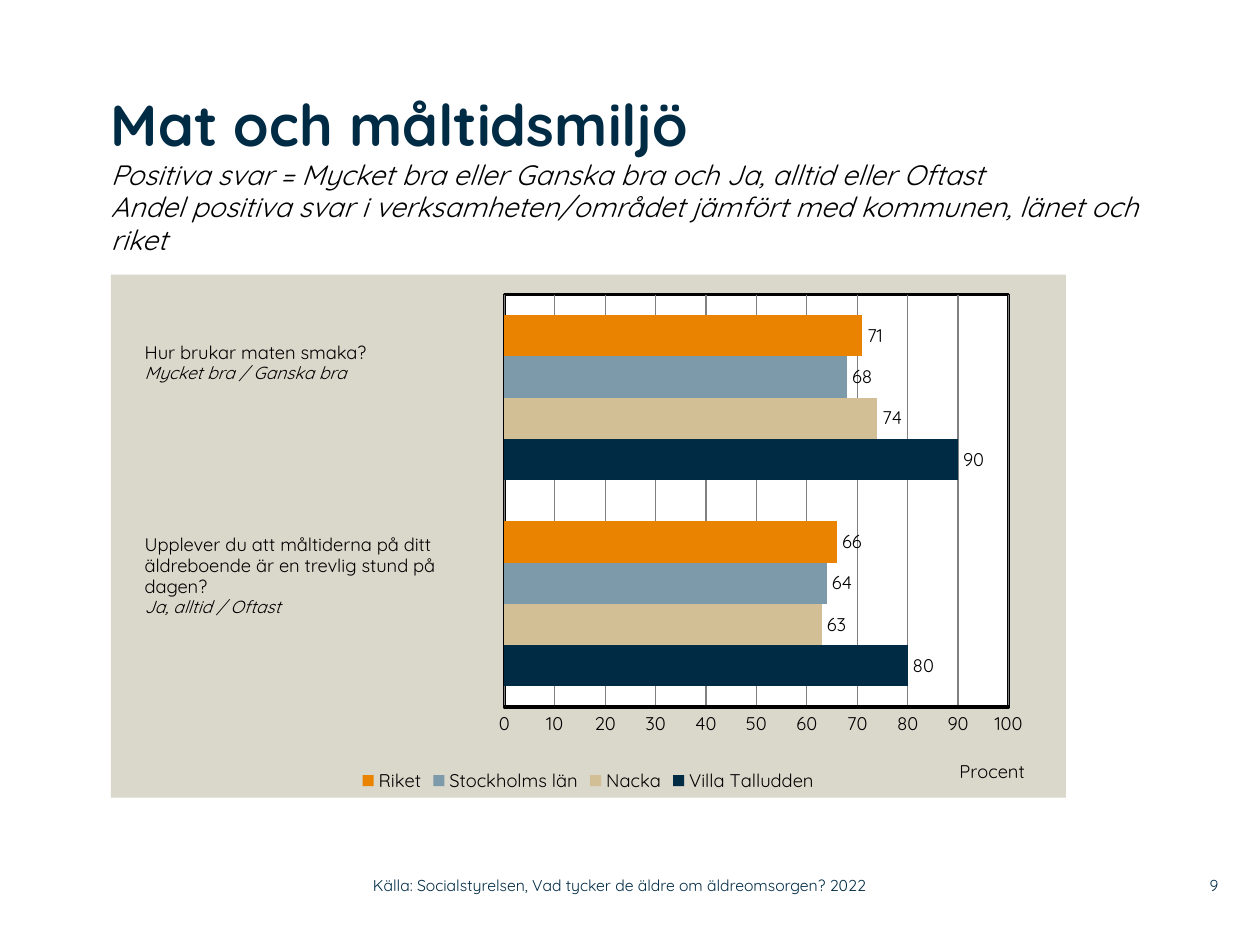
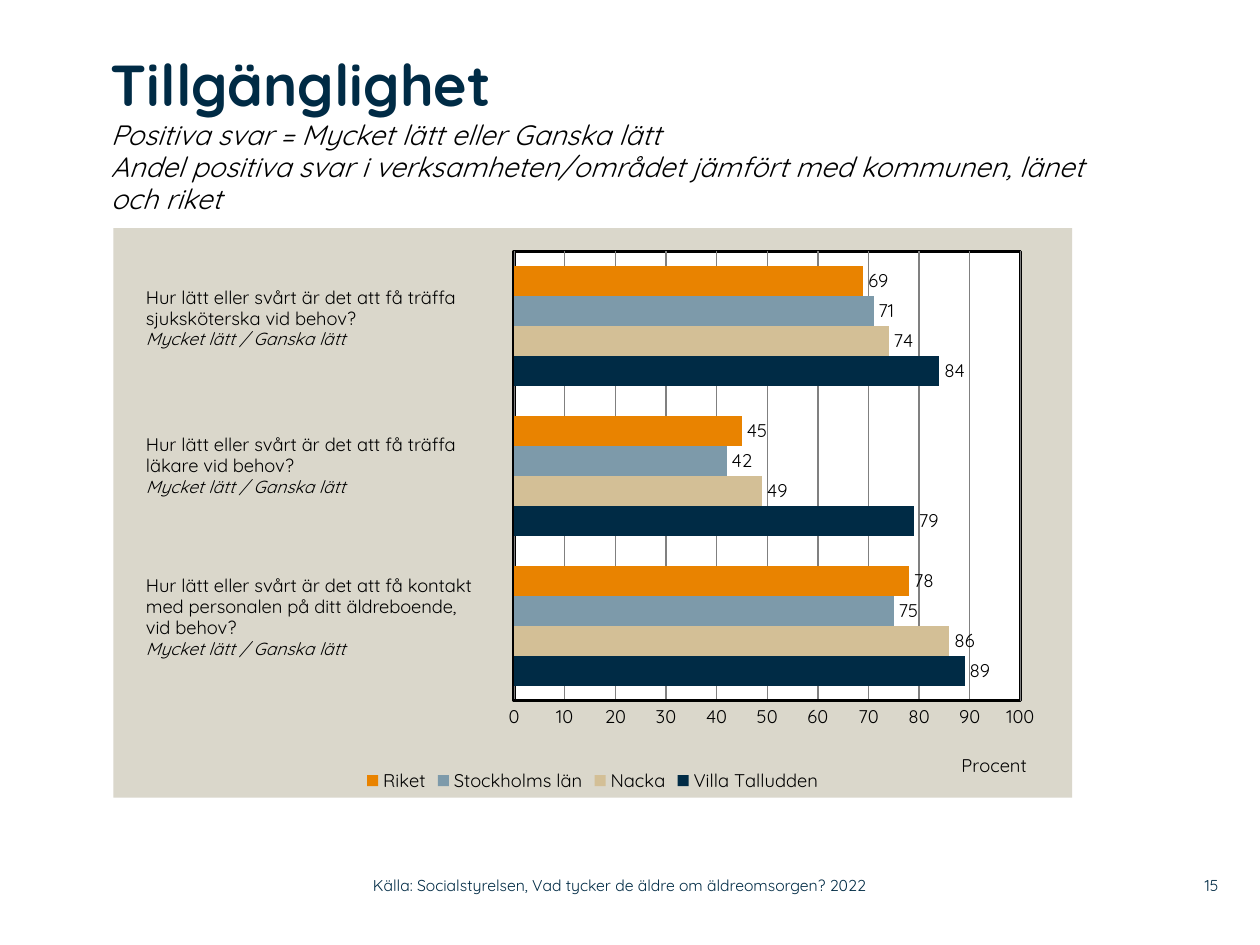
from dataclasses import dataclass

from pptx import Presentation
from pptx.chart.data import CategoryChartData
from pptx.dml.color import RGBColor
from pptx.enum.chart import XL_CHART_TYPE as ChartType, XL_LABEL_POSITION as LabelPosition
from pptx.enum.chart import XL_LEGEND_POSITION as LegendPosition, XL_TICK_MARK as TickMark
from pptx.enum.text import MSO_ANCHOR as Anchor, PP_ALIGN as Align
from pptx.oxml import parse_xml
from pptx.oxml.ns import nsdecls, qn
from pptx.util import Pt

PX = 9144


@dataclass(frozen=True)
class Theme:
    font: str = "Quicksand"
    navy: str = "002B45"
    black: str = "000000"
    white: str = "FFFFFF"
    panel: str = "DAD7CB"
    grid: str = "808080"
    sand: str = "D3BF96"
    steel: str = "7D9AAA"
    orange: str = "E98300"
    title_size: float = 33
    subtitle_size: float = 16
    body_size: float = 10.5
    answer_size: float = 10
    footer_size: float = 9
    line_spacing: float = 0.96


theme = Theme()


def set_font(font, size, color, **values):
    for name, value in dict(name=theme.font, size=Pt(size), **values).items():
        setattr(font, name, value)
    font.color.rgb = RGBColor.from_string(color)


def add_text(slide, box, lines, size, color, inset=(10, 5), anchor=Anchor.TOP, align=Align.LEFT):
    frame = slide.shapes.add_textbox(*[value * PX for value in box]).text_frame
    side, top = [value * PX for value in inset]
    frame_format = dict(word_wrap=True, vertical_anchor=anchor, margin_left=side,
                        margin_right=side, margin_top=top, margin_bottom=top)
    for name, value in frame_format.items():
        setattr(frame, name, value)
    for index, line in enumerate(lines):
        paragraph = frame.paragraphs[0] if index == 0 else frame.add_paragraph()
        paragraph.alignment = align
        paragraph.line_spacing = theme.line_spacing
        run = paragraph.add_run()
        run.text = line
        set_font(run.font, size, color)
    return frame


source = "Källa: Socialstyrelsen, Vad tycker de äldre om äldreomsorgen? 2022"
comparison = ("Andel positiva svar i verksamheten/området jämfört med "
              "kommunen, länet och riket")
series_styles = [("Villa Talludden", theme.navy), ("Nacka", theme.sand),
                 ("Stockholms län", theme.steel), ("Riket", theme.orange)]

survey_slides = [
    dict(
        title="Mat och måltidsmiljö", number="9", title_box=(88, 74, 842, 144),
        definition="Positiva svar = Mycket bra eller Ganska bra och Ja, alltid eller Oftast",
        chart_box=(88, 218, 758, 415),
        plot=(0.412, 0.038, 0.528, 0.789), axis_title=(0.885, 0.918),
        values=[(80, 90), (63, 74), (64, 68), (66, 71)],
        questions=[
            ((105, 267, 277, 63), ["Hur brukar maten smaka?"], "Mycket bra / Ganska bra"),
            ((105, 419, 277, 98),
             ["Upplever du att måltiderna på ditt äldreboende är en trevlig stund på", "dagen?"],
             "Ja, alltid / Oftast"),
        ],
    ),
    dict(
        title="Tillgänglighet", number="15", title_box=(88, 42, 777, 139),
        definition="Positiva svar = Mycket lätt eller Ganska lätt",
        chart_box=(90, 181, 761, 452),
        plot=(0.418, 0.041, 0.528, 0.789), axis_title=(0.881, 0.914),
        values=[(89, 79, 84), (86, 49, 74), (75, 42, 71), (78, 45, 69)],
        questions=[
            ((106, 223, 299, 81),
             ["Hur lätt eller svårt är det att få träffa sjuksköterska vid behov?"],
             "Mycket lätt / Ganska lätt"),
            ((106, 340, 293, 81),
             ["Hur lätt eller svårt är det att få träffa", "läkare vid behov?"],
             "Mycket lätt / Ganska lätt"),
            ((106, 452, 301, 98),
             ["Hur lätt eller svårt är det att få kontakt",
              "med personalen på ditt äldreboende,", "vid behov?"],
             "Mycket lätt / Ganska lätt"),
        ],
    ),
]

presentation = Presentation()
presentation.slide_width = 1000 * PX
presentation.slide_height = 750 * PX

for survey in survey_slides:
    slide = presentation.slides.add_slide(presentation.slide_layouts[5])

    title = slide.shapes.title
    for name, value in zip(("left", "top", "width", "height"), survey["title_box"]):
        setattr(title, name, value * PX)
    frame = title.text_frame
    title_format = dict(margin_left=0, margin_right=0, margin_top=0, margin_bottom=0,
                        word_wrap=True, vertical_anchor=Anchor.TOP)
    for name, value in title_format.items():
        setattr(frame, name, value)
    paragraph = frame.paragraphs[0]
    paragraph.alignment = Align.LEFT
    paragraph.line_spacing = theme.line_spacing
    heading = paragraph.add_run()
    heading.text = survey["title"]
    set_font(heading.font, theme.title_size, theme.navy, bold=True)
    for line in (survey["definition"], comparison):
        paragraph.add_line_break()
        run = paragraph.add_run()
        run.text = line
        set_font(run.font, theme.subtitle_size, theme.black, bold=False, italic=True)

    chart_data = CategoryChartData()
    chart_data.categories = [str(index + 1) for index in range(len(survey["questions"]))]
    for (name, color), values in zip(series_styles, survey["values"]):
        chart_data.add_series(name, values)
    chart = slide.shapes.add_chart(ChartType.BAR_CLUSTERED,
                                   *[value * PX for value in survey["chart_box"]],
                                   chart_data).chart
    set_font(chart.font, theme.body_size, theme.black)
    chart.has_title = False
    chart.has_legend = True
    chart.legend.position = LegendPosition.BOTTOM
    chart.legend.include_in_layout = False
    set_font(chart.legend.font, theme.body_size, theme.black)

    plot = chart.plots[0]
    for name, value in dict(gap_width=100, overlap=0, vary_by_categories=False).items():
        setattr(plot, name, value)
    for series, (name, color) in zip(plot.series, series_styles):
        series.format.fill.solid()
        series.format.fill.fore_color.rgb = RGBColor.from_string(color)
        labels = series.data_labels
        labels.show_value = True
        labels.position = LabelPosition.OUTSIDE_END
        set_font(labels.font, theme.body_size, theme.black)

    chart.category_axis.visible = False
    axis = chart.value_axis
    axis_format = dict(minimum_scale=0, maximum_scale=100, major_unit=10,
                       has_major_gridlines=True, major_tick_mark=TickMark.NONE,
                       minor_tick_mark=TickMark.NONE)
    for name, value in axis_format.items():
        setattr(axis, name, value)
    set_font(axis.tick_labels.font, theme.body_size, theme.black)
    for line, color, width in ((axis.format.line, theme.black, 2),
                               (axis.major_gridlines.format.line, theme.grid, 0.75)):
        line.color.rgb = RGBColor.from_string(color)
        line.width = Pt(width)
    axis_title = axis.axis_title.text_frame
    axis_title.text = "Procent"
    set_font(axis_title.paragraphs[0].runs[0].font, theme.body_size, theme.black, bold=False)

    chart_area = chart.element.find(qn("c:chart"))
    plot_area = chart_area.find(qn("c:plotArea"))
    title_element = plot_area.find(qn("c:valAx")).find(qn("c:title"))
    for parent, index, target, place in (
            (plot_area, 0, '<c:layoutTarget val="inner"/>', survey["plot"]),
            (title_element, 1, "", survey["axis_title"])):
        for layout in parent.findall(qn("c:layout")):
            parent.remove(layout)
        modes = "".join(f'<c:{key}Mode val="edge"/>' for key in "xy")
        sizes = "".join(f'<c:{key} val="{value}"/>' for key, value in zip("xywh", place))
        parent.insert(index, parse_xml(
            f'<c:layout {nsdecls("c")}><c:manualLayout>{target}{modes}{sizes}'
            '</c:manualLayout></c:layout>'))
    panel_fill, plot_fill = [
        parse_xml(f'<c:spPr {nsdecls("c", "a")}><a:solidFill><a:srgbClr val="{color}"/>'
                  f'</a:solidFill>{outline}</c:spPr>')
        for color, outline in (
            (theme.panel, "<a:ln><a:noFill/></a:ln>"),
            (theme.white, f'<a:ln w="{Pt(2)}"><a:solidFill><a:srgbClr val="{theme.black}"/>'
                          '</a:solidFill></a:ln>'))]
    chart_area.addnext(panel_fill)
    plot_area.append(plot_fill)

    for box, question, answer in survey["questions"]:
        frame = add_text(slide, box, [*question, answer], theme.body_size, theme.black)
        set_font(frame.paragraphs[-1].runs[0].font, theme.answer_size, theme.black, italic=True)

    for box, text, align in (((296, 689, 443, 29), source, Align.LEFT),
                             ((920, 689, 47, 29), survey["number"], Align.RIGHT)):
        add_text(slide, box, [text], theme.footer_size, theme.navy,
                 inset=(0, 0), anchor=Anchor.MIDDLE, align=align)

presentation.save("out.pptx")
